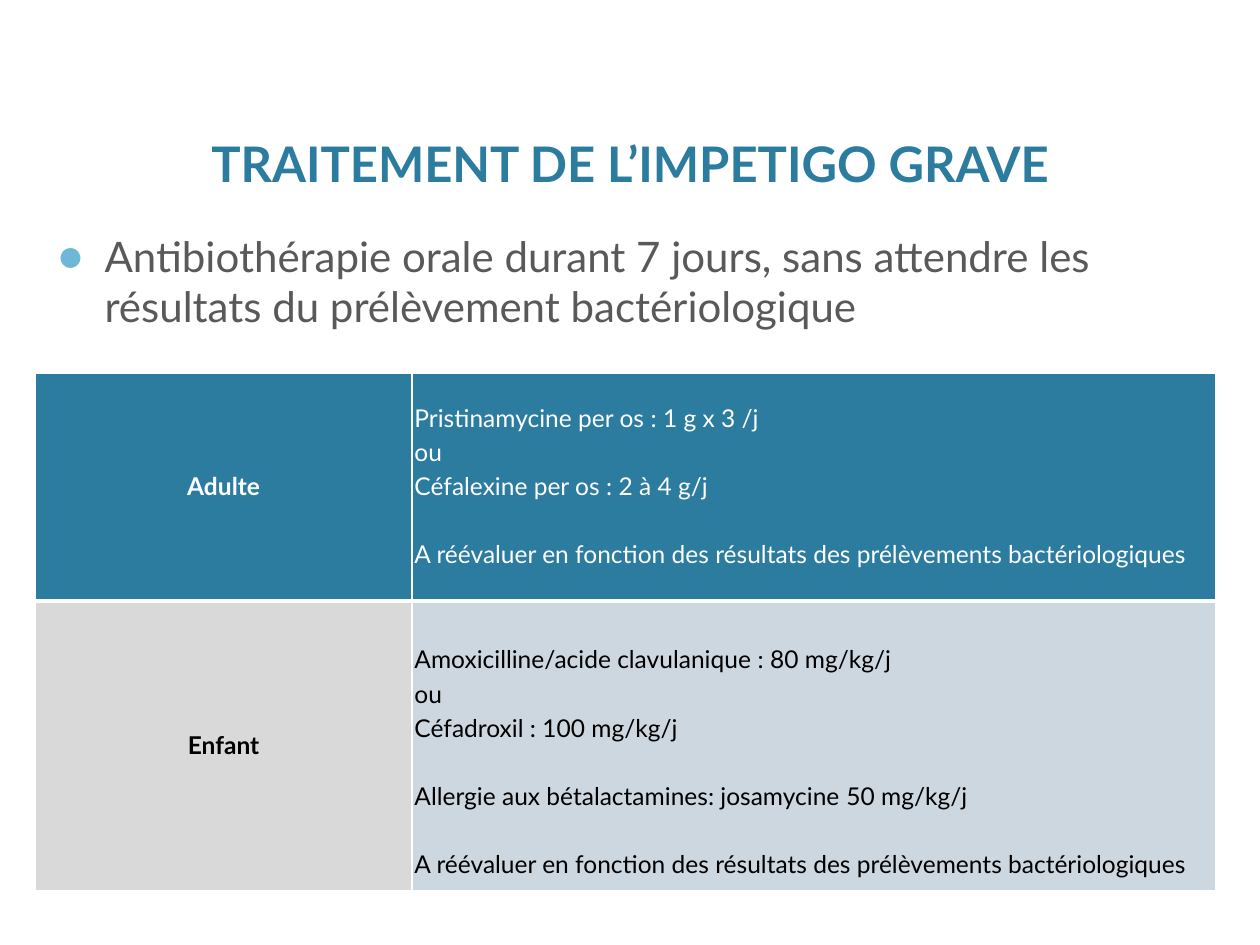
import pptx
import pptx.dml.color
import pptx.enum.text
import pptx.oxml
import pptx.oxml.ns
import pptx.util
from pptx.util import Inches

FONT = "Lato"
BLUE, WHITE, BLACK = "2C7C9F", "FFFFFF", "000000"
LINE, GAP = 11.5, 4
BLANK_LINE = LINE + 2 * GAP
ANCHOR = pptx.enum.text.MSO_ANCHOR
ALIGN = pptx.enum.text.PP_ALIGN

REVIEW = "A réévaluer en fonction des résultats des prélèvements bactériologiques"
ROWS = [
    {
        "label": "Adulte", "fills": (BLUE, BLUE), "color": WHITE,
        "height": 1.81, "borders": (1, 3), "lead": 0,
        "groups": [
            ["Pristinamycine per os\u00a0: 1\u00a0g x 3 /j", "ou",
             "Céfalexine per os\u00a0: 2 à 4 g/j"],
            [REVIEW],
        ],
    },
    {
        "label": "Enfant", "fills": ("D9D9D9", "CDD7DF"), "color": BLACK,
        "height": 2.3, "borders": (3, 1), "lead": BLANK_LINE,
        "groups": [
            ["Amoxicilline/acide clavulanique\u00a0: 80 mg/kg/j", "ou",
             "Céfadroxil\u00a0: 100 mg/kg/j"],
            ["Allergie aux bétalactamines: josamycine\u00a050 mg/kg/j"],
            [REVIEW],
        ],
    },
]


def rgb(value):
    return pptx.dml.color.RGBColor.from_string(value)


def set_font(p, size, color, bold=False):
    p.font.name = FONT
    p.font.size = pptx.util.Pt(size)
    p.font.bold = bold
    p.font.color.rgb = rgb(color)


def append_xml(parent, tag, inner="", **attrs):
    text = "".join(f' {k}="{v}"' for k, v in attrs.items())
    parent.append(pptx.oxml.parse_xml(
        f'<a:{tag} {pptx.oxml.ns.nsdecls("a")}{text}>{inner}</a:{tag}>'))


def solid(color):
    return f'<a:solidFill><a:srgbClr val="{color}"/></a:solidFill>'


def place(sp, box):
    sp.left, sp.top, sp.width, sp.height = (Inches(v) for v in box)


def add_title(s, box):
    sp = s.shapes.title
    place(sp, box)
    tf = sp.text_frame
    tf.text = "TRAITEMENT DE L’IMPETIGO GRAVE"
    tf.vertical_anchor = ANCHOR.BOTTOM
    tf.auto_size = pptx.enum.text.MSO_AUTO_SIZE.NONE
    p = tf.paragraphs[0]
    p.alignment = ALIGN.CENTER
    set_font(p, 28, BLUE, True)


def add_body(s, box):
    sp = s.placeholders[1]
    place(sp, box)
    tf = sp.text_frame
    tf.text = ("Antibiothérapie orale durant 7 jours, sans attendre les "
               "résultats du prélèvement bactériologique")
    tf.auto_size = pptx.enum.text.MSO_AUTO_SIZE.NONE
    p = tf.paragraphs[0]
    p.space_before = pptx.util.Pt(0)
    pPr = p._p.get_or_add_pPr()
    pPr.set("marL", str(Inches(0.38)))
    pPr.set("indent", str(-Inches(0.38)))
    append_xml(pPr, "buClr", '<a:srgbClr val="6FB7D7"/>')
    append_xml(pPr, "buSzPct", val=110000)
    append_xml(pPr, "buFont", typeface="Arial")
    append_xml(pPr, "buChar", char="●")
    set_font(p, 24, "595959")


def format_cell(cell, fill, borders, lead=0):
    cell.vertical_anchor = ANCHOR.MIDDLE
    cell.margin_left = cell.margin_right = cell.margin_bottom = Inches(0.02)
    cell.margin_top = Inches(0.02) + pptx.util.Pt(GAP + lead)
    tcPr = cell._tc.get_or_add_tcPr()
    for side, width in zip("LRTB", (1, 1, *borders)):
        append_xml(tcPr, f"ln{side}", solid(WHITE), w=pptx.util.Pt(width))
    cell.fill.solid()
    cell.fill.fore_color.rgb = rgb(fill)


def write_cell(cell, groups, color, bold=False, align=ALIGN.LEFT):
    tf = cell.text_frame
    tf.text = "\n".join(line for group in groups for line in group)
    paragraphs = iter(tf.paragraphs)
    for g, group in enumerate(groups):
        for i in range(len(group)):
            p = next(paragraphs)
            p.alignment = align
            p.line_spacing = pptx.util.Pt(LINE)
            p.space_after = pptx.util.Pt(GAP)
            if i:
                before = GAP
            else:
                before = GAP + BLANK_LINE if g else 0
            p.space_before = pptx.util.Pt(before)
            set_font(p, 14, color, bold)


def add_treatments(s, box):
    table = s.shapes.add_table(len(ROWS), 2, *(Inches(v) for v in box)).table
    table.first_row = table.horz_banding = False
    for column, width in zip(table.columns, (2.99, 6.38)):
        column.width = Inches(width)
    for i, row in enumerate(ROWS):
        table.rows[i].height = Inches(row["height"])
        label, drugs = table.cell(i, 0), table.cell(i, 1)
        format_cell(label, row["fills"][0], row["borders"])
        format_cell(drugs, row["fills"][1], row["borders"], row["lead"])
        write_cell(label, [[row["label"]]], row["color"], True, ALIGN.CENTER)
        write_cell(drugs, row["groups"], row["color"])


def main():
    prs = pptx.Presentation()
    prs.slide_width, prs.slide_height = Inches(10), Inches(7.5)
    s = prs.slides.add_slide(prs.slide_layouts[1])
    add_title(s, (0.6, 0.12, 8.8, 1.46))
    add_body(s, (0.35, 1.78, 9.37, 4.96))
    add_treatments(s, (0.28, 2.96, 9.37, 4.11))
    prs.save("out.pptx")


if __name__ == "__main__":
    main()
